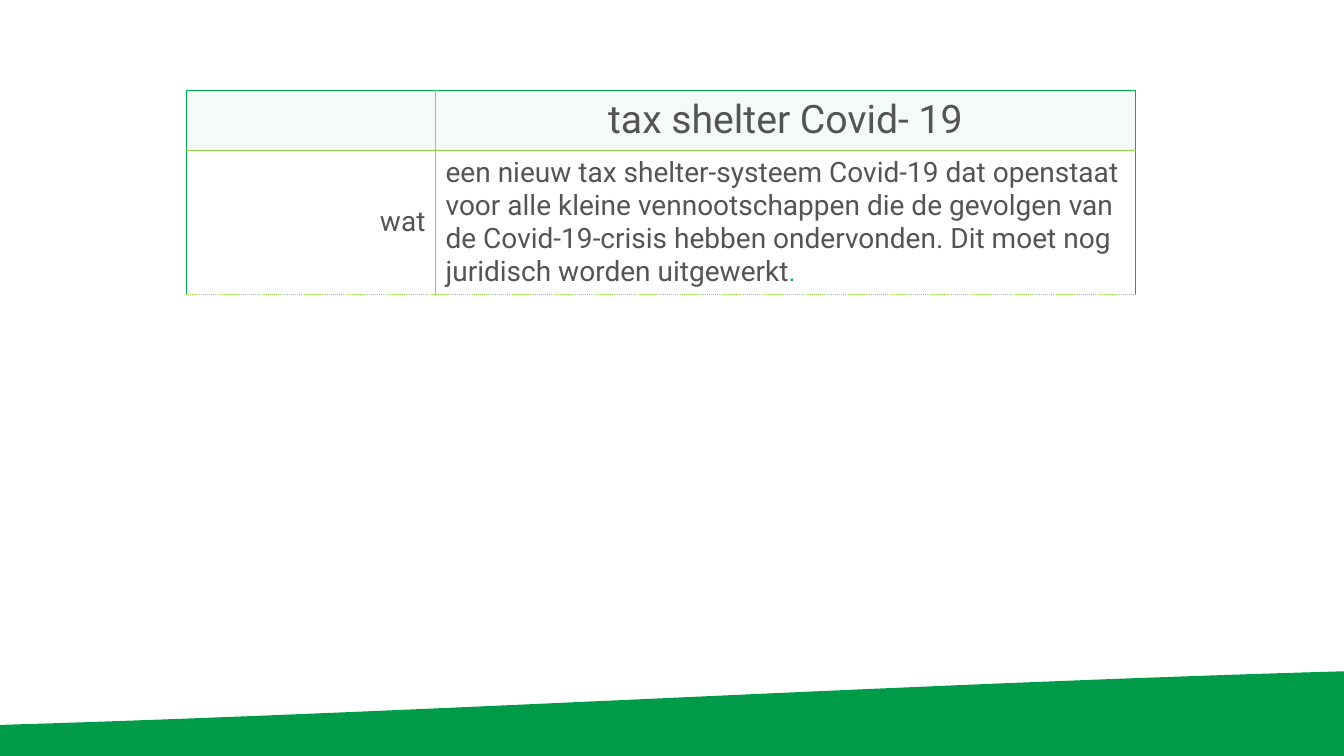
from dataclasses import dataclass
from typing import Optional

from lxml.etree import SubElement
from pptx import Presentation
from pptx.dml.color import RGBColor
from pptx.enum.text import MSO_ANCHOR, PP_ALIGN
from pptx.oxml.ns import qn
from pptx.util import Inches, Pt

WIDTH, HEIGHT = Inches(13.33), Inches(7.5)
BAND_GREEN = RGBColor(0x00, 0x9B, 0x48)
EDGE_GREEN = RGBColor(0x00, 0xB0, 0x50)
RULE_GREEN = RGBColor(0x92, 0xD0, 0x50)
HEADER_TINT = RGBColor(0xF4, 0xFB, 0xF7)
TEXT_GREY = RGBColor(0x54, 0x54, 0x54)

# Table grid, in inches
LEFT, TOP = 1.85, 0.9
COLS = (2.47, 6.94)
ROWS = (0.59, 1.43)

# Wave control points, as shares of the slide
WAVE = ((0, 0.959), (0.335, 0.941), (0.665, 0.905), (1, 0.888))
WAVE_STEPS = 32


@dataclass
class Cell:
    row: int
    col: int
    text: str = ""
    size: float = 20
    align: PP_ALIGN = PP_ALIGN.LEFT
    end_mark: str = ""
    fill: Optional[RGBColor] = None


CELLS = (
    Cell(0, 0, fill=HEADER_TINT),
    Cell(0, 1, "tax shelter Covid- 19", 28, PP_ALIGN.CENTER, fill=HEADER_TINT),
    Cell(1, 0, "wat", align=PP_ALIGN.RIGHT),
    Cell(1, 1, "een nieuw tax shelter-systeem Covid-19 dat openstaat voor alle "
         "kleine vennootschappen die de gevolgen van de Covid-19-crisis hebben "
         "ondervonden. Dit moet nog juridisch worden uitgewerkt", end_mark="."),
)


def add_text(p, text: str, *, size: float = 20, font: str = "Roboto",
             color: RGBColor = TEXT_GREY) -> None:
    r = p.add_run()
    r.text = text
    r.font.size, r.font.name = Pt(size), font
    r.font.color.rgb = color


def add_border(cell, side: str, color: RGBColor, dash: str = "solid") -> None:
    tc_pr = cell._tc.get_or_add_tcPr()
    ln = SubElement(tc_pr, qn(f"a:ln{side}"), w=str(Pt(1)))
    fill = SubElement(ln, qn("a:solidFill"))
    SubElement(fill, qn("a:srgbClr"), val=str(color))
    SubElement(ln, qn("a:prstDash"), val=dash)


def draw_cell(table, c: Cell) -> None:
    cell = table.cell(c.row, c.col)
    cell.vertical_anchor = MSO_ANCHOR.MIDDLE
    # Outer edges are darker than the inner rules; the bottom is dotted
    last_row = c.row == len(ROWS) - 1
    add_border(cell, "L", EDGE_GREEN if c.col == 0 else RULE_GREEN)
    add_border(cell, "R", EDGE_GREEN if c.col == len(COLS) - 1 else RULE_GREEN)
    add_border(cell, "T", EDGE_GREEN if c.row == 0 else RULE_GREEN)
    add_border(cell, "B", RULE_GREEN, "sysDot" if last_row else "solid")
    if c.fill is None:
        cell.fill.background()
    else:
        cell.fill.solid()
        cell.fill.fore_color.rgb = c.fill
    p = cell.text_frame.paragraphs[0]
    p.alignment = c.align
    if c.text:
        add_text(p, c.text, size=c.size)
    if c.end_mark:
        add_text(p, c.end_mark, size=16, font="Arial", color=BAND_GREEN)


def draw_table(s) -> None:
    frame = s.shapes.add_table(len(ROWS), len(COLS), Inches(LEFT), Inches(TOP),
                               Inches(sum(COLS)), Inches(sum(ROWS)))
    table = frame.table
    table.first_row = table.horz_banding = False
    for column, width in zip(table.columns, COLS):
        column.width = Inches(width)
    for row, height in zip(table.rows, ROWS):
        row.height = Inches(height)
    for c in CELLS:
        draw_cell(table, c)


def wave_point(t: float) -> tuple[int, int]:
    weights = ((1 - t) ** 3, 3 * t * (1 - t) ** 2, 3 * t ** 2 * (1 - t), t ** 3)
    x, y = (sum(w * pt[i] for w, pt in zip(weights, WAVE)) for i in (0, 1))
    return round(x * WIDTH), round(y * HEIGHT)


def draw_wave(s) -> None:
    points = [wave_point(i / WAVE_STEPS) for i in range(WAVE_STEPS + 1)]
    builder = s.shapes.build_freeform(*points[0])
    builder.add_line_segments(points[1:] + [(WIDTH, HEIGHT), (0, HEIGHT)])
    sp = builder.convert_to_shape()
    sp.shadow.inherit = False
    sp.fill.solid()
    sp.fill.fore_color.rgb = BAND_GREEN
    sp.line.fill.background()


def main() -> None:
    prs = Presentation()
    prs.slide_width, prs.slide_height = WIDTH, HEIGHT
    s = prs.slides.add_slide(prs.slide_layouts[6])
    # Green band at the foot
    draw_wave(s)
    # Tax shelter table
    draw_table(s)
    prs.save("out.pptx")


if __name__ == "__main__":
    main()
